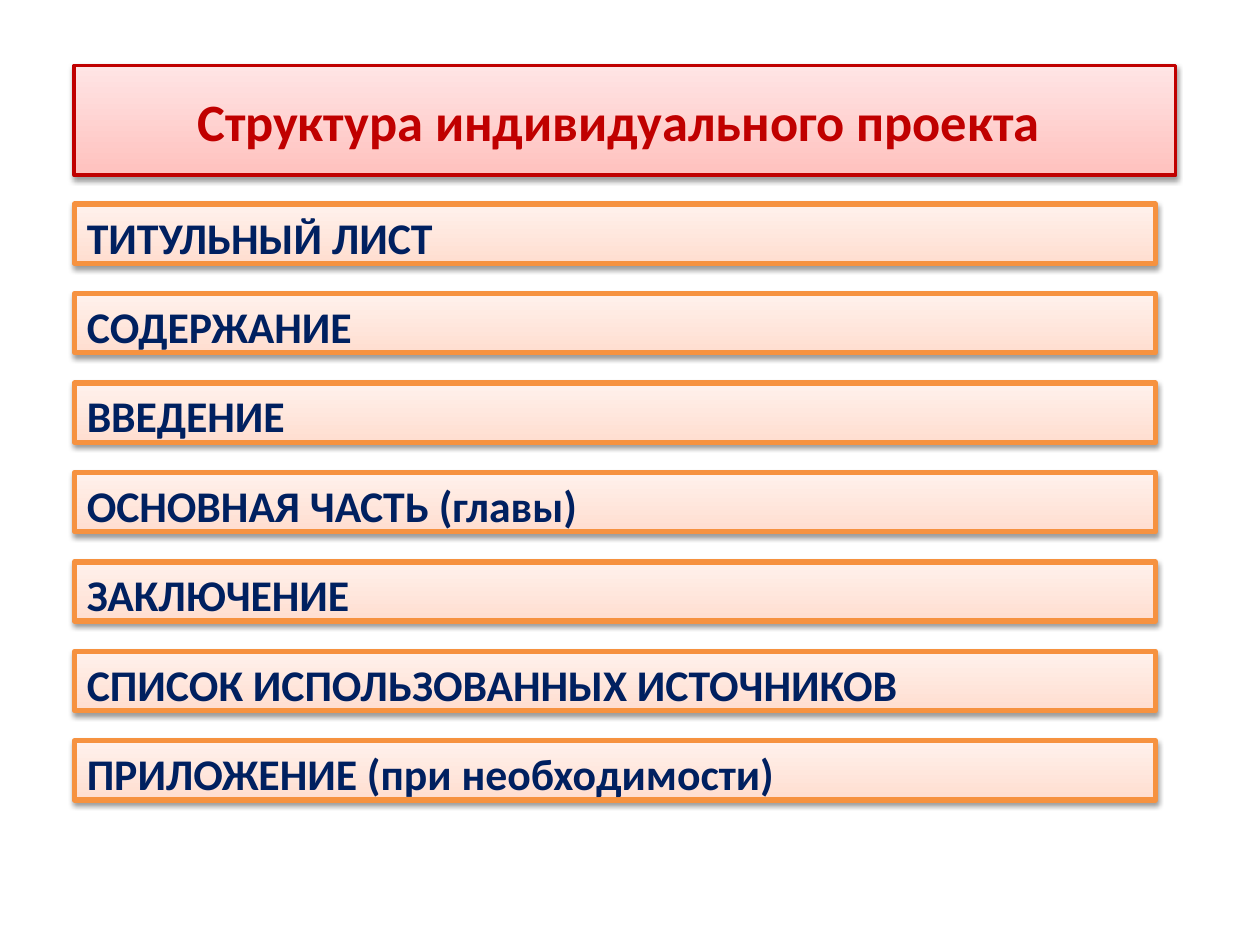
from dataclasses import dataclass

from lxml import etree
from pptx import Presentation
from pptx import util as u
from pptx.dml.color import RGBColor
from pptx.enum import shapes, text
from pptx.oxml.ns import qn


@dataclass(frozen=True)
class Style:
    """Colours and sizes of one kind of panel."""
    low: str
    high: str
    edge: str
    width: float
    ink: str
    size: int


@dataclass(frozen=True)
class Theme:
    """Look of the whole slide."""
    font: str = "Calibri"
    title: Style = Style("FFC1BE", "FFE5E5", "C00000", 2.25, "C00000", 30)
    row: Style = Style("FFDED0", "FFF1EC", "F69240", 3, "002060", 25)


THEME = Theme()
TITLE = "Структура индивидуального проекта "
PARTS = [
    "ТИТУЛЬНЫЙ ЛИСТ",
    "СОДЕРЖАНИЕ",
    "ВВЕДЕНИЕ",
    "ОСНОВНАЯ ЧАСТЬ (главы)",
    "ЗАКЛЮЧЕНИЕ",
    "СПИСОК ИСПОЛЬЗОВАННЫХ ИСТОЧНИКОВ",
    "ПРИЛОЖЕНИЕ (при необходимости)",
]


def add_shade(shape):
    """Give the shape a soft shadow straight below it."""
    shape.shadow.inherit = False
    effects = shape._element.spPr.find(qn("a:effectLst"))
    shade = etree.SubElement(
        effects, qn("a:outerShdw"), blurRad=str(u.Pt(3.1)),
        dist=str(u.Pt(1.6)), dir="5400000", rotWithShape="0")
    black = etree.SubElement(shade, qn("a:srgbClr"), val="000000")
    etree.SubElement(black, qn("a:alpha"), val="38000")


def add_panel(slide, box, words, style, align, anchor):
    """Add a shaded panel with one line of bold text and return its paragraph."""
    panel = slide.shapes.add_shape(
        shapes.MSO_SHAPE.RECTANGLE, *map(u.Inches, box))
    panel.fill.gradient()
    panel.fill.gradient_angle = 90
    for stop, tint in zip(panel.fill.gradient_stops, (style.low, style.high)):
        stop.color.rgb = RGBColor.from_string(tint)
    panel.line.color.rgb = RGBColor.from_string(style.edge)
    panel.line.width = u.Pt(style.width)
    add_shade(panel)

    frame = panel.text_frame
    frame.word_wrap = True
    frame.vertical_anchor = anchor
    frame.text = words
    para = frame.paragraphs[0]
    para.alignment = align
    font = para.runs[0].font
    font.name, font.size, font.bold = THEME.font, u.Pt(style.size), True
    font.color.rgb = RGBColor.from_string(style.ink)
    return para


def add_title(slide, box):
    """Fill the box with the centred title panel."""
    add_panel(slide, box, TITLE, THEME.title,
              text.PP_ALIGN.CENTER, text.MSO_ANCHOR.MIDDLE)


def add_rows(slide, box, high=0.47):
    """Spread the project parts evenly down the box as panels."""
    left, top, width, height = box
    step = (height - high) / (len(PARTS) - 1)
    for i, part in enumerate(PARTS):
        para = add_panel(slide, (left, top + i * step, width, high), part,
                         THEME.row, text.PP_ALIGN.LEFT, text.MSO_ANCHOR.TOP)
        props = para._p.get_or_add_pPr()
        props.set("marL", str(u.Inches(0.56)))
        props.set("indent", str(u.Inches(-0.56)))


def main():
    """Build and save the slide."""
    deck = Presentation()
    deck.slide_width, deck.slide_height = u.Inches(10), u.Inches(7.5)
    slide = deck.slides.add_slide(deck.slide_layouts[6])
    add_title(slide, (0.59, 0.52, 8.74, 0.87))
    add_rows(slide, (0.59, 1.62, 8.58, 4.73))
    deck.save("out.pptx")


if __name__ == "__main__":
    main()
